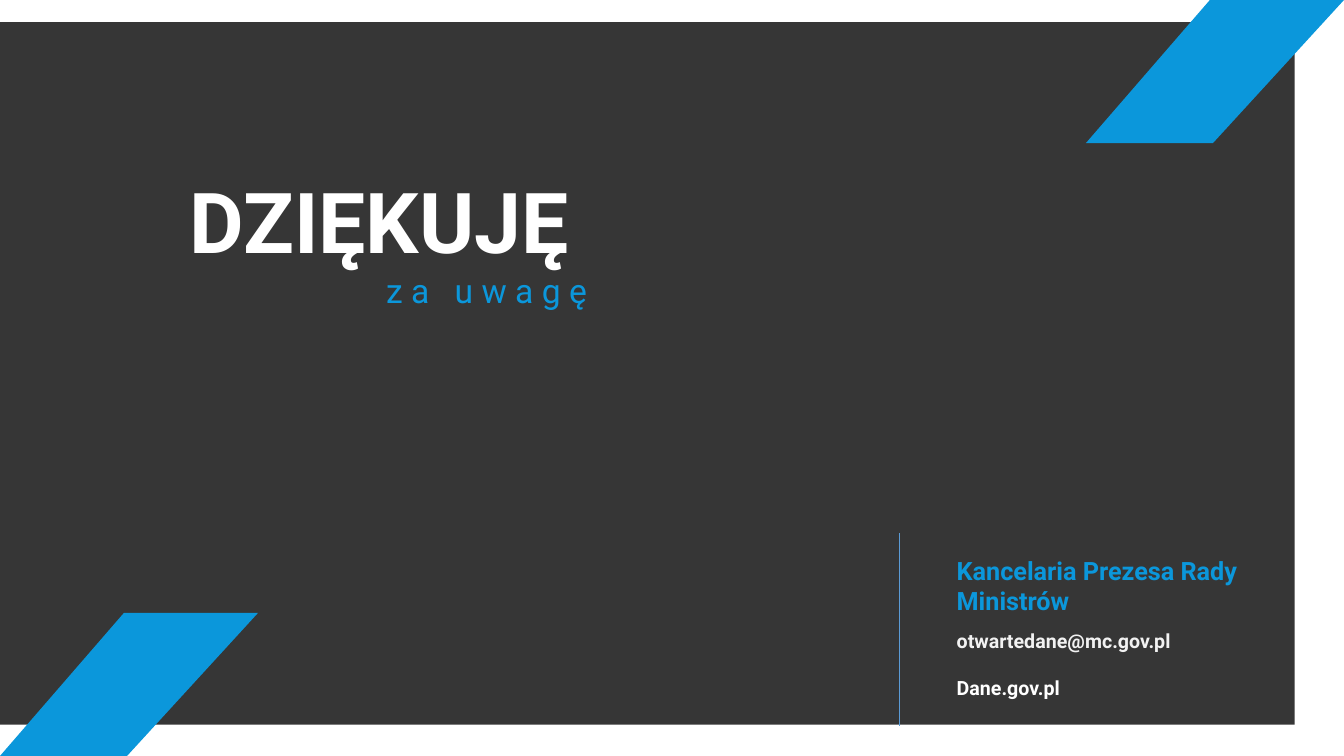
from lxml import etree
from pptx import Presentation
from pptx.dml.color import RGBColor
from pptx.enum.shapes import MSO_CONNECTOR, MSO_SHAPE
from pptx.enum.text import MSO_ANCHOR, MSO_AUTO_SIZE, PP_ALIGN
from pptx.oxml.ns import qn
from pptx.util import Inches, Pt

RECTANGLE = MSO_SHAPE.RECTANGLE
STRAIGHT = MSO_CONNECTOR.STRAIGHT
TOP = MSO_ANCHOR.TOP
LEFT = PP_ALIGN.LEFT
NO_AUTOSIZE = MSO_AUTO_SIZE.NONE

FONT = "Roboto"
BLUE = "0B97DB"
WHITE = "FFFFFF"
PANEL = (0, 0.22, 12.84, 6.97)
PANEL_OPACITY = 79
STRIPES = [
    [(0, 7.5), (1.26, 7.5), (2.56, 6.08), (1.23, 6.08)],
    [(10.77, 1.42), (12.03, 1.42), (13.33, 0), (12, 0)],
]
DIVIDER = (8.92, 7.2, 8.92, 5.29)

# text, size, colour, bold, space before
TITLE = [("DZIĘKUJĘ", 60, WHITE, True, 0)]
SUBTITLE = [("za uwagę", 24, BLUE, False, 0)]
CONTACT = [
    ("Kancelaria Prezesa Rady Ministrów", 18, BLUE, True, 0),
    ("otwartedane@mc.gov.pl", 14, "F2F2F2", True, 9.4),
    ("Dane.gov.pl", 14, WHITE, True, 16.4),
]


def color(value):
    return RGBColor.from_string(value)


def inches(values):
    return [Inches(value) for value in values]


def paint(shape, value):
    shape.shadow.inherit = False
    shape.fill.solid()
    shape.fill.fore_color.rgb = color(value)
    shape.line.fill.background()


def add_panel(page):
    panel = page.shapes.add_shape(RECTANGLE, *inches(PANEL))
    paint(panel, "000000")
    fill_color = panel._element.spPr.find(qn("a:solidFill"))[0]
    alpha = etree.SubElement(fill_color, qn("a:alpha"))
    alpha.set("val", str(PANEL_OPACITY * 1000))


def add_stripe(page, corners):
    points = [inches(corner) for corner in corners]
    builder = page.shapes.build_freeform(*points[0])
    builder.add_line_segments(points[1:], close=True)
    paint(builder.convert_to_shape(), BLUE)


def add_divider(page):
    divider = page.shapes.add_connector(STRAIGHT, *inches(DIVIDER))
    divider.line.color.rgb = color("5B9BD5")
    divider.line.width = Pt(0.5)
    etree.SubElement(divider._element.spPr, qn("a:effectLst"))


def write(box, place, lines, wrap=False):
    box.left, box.top, box.width, box.height = inches(place)
    frame = box.text_frame
    frame.text = "\n".join(line[0] for line in lines)
    frame.word_wrap = wrap
    frame.auto_size = NO_AUTOSIZE
    frame.vertical_anchor = TOP
    for para, (_, size, value, bold, before) in zip(frame.paragraphs, lines):
        para.alignment = LEFT
        para.space_before = Pt(before)
        font = para.runs[0].font
        font.name, font.size, font.bold = FONT, Pt(size), bold
        font.color.rgb = color(value)


def main():
    deck = Presentation()
    deck.slide_width, deck.slide_height = inches((13.33, 7.5))
    page = deck.slides.add_slide(deck.slide_layouts[0])
    title, subtitle = page.placeholders

    add_panel(page)
    for corners in STRIPES:
        add_stripe(page, corners)

    write(title, (1.78, 1.63, 4.36, 1.11), TITLE)
    write(subtitle, (3.73, 2.63, 2.32, 0.5), SUBTITLE)
    subtitle.text_frame.paragraphs[0].runs[0].font._element.set("spc", "600")
    for box in (title, subtitle):
        page.shapes._spTree.append(box._element)

    contact = page.shapes.add_textbox(0, 0, 0, 0)
    write(contact, (9.39, 5.46, 3.13, 1.55), CONTACT, wrap=True)
    add_divider(page)
    deck.save("out.pptx")


if __name__ == "__main__":
    main()
